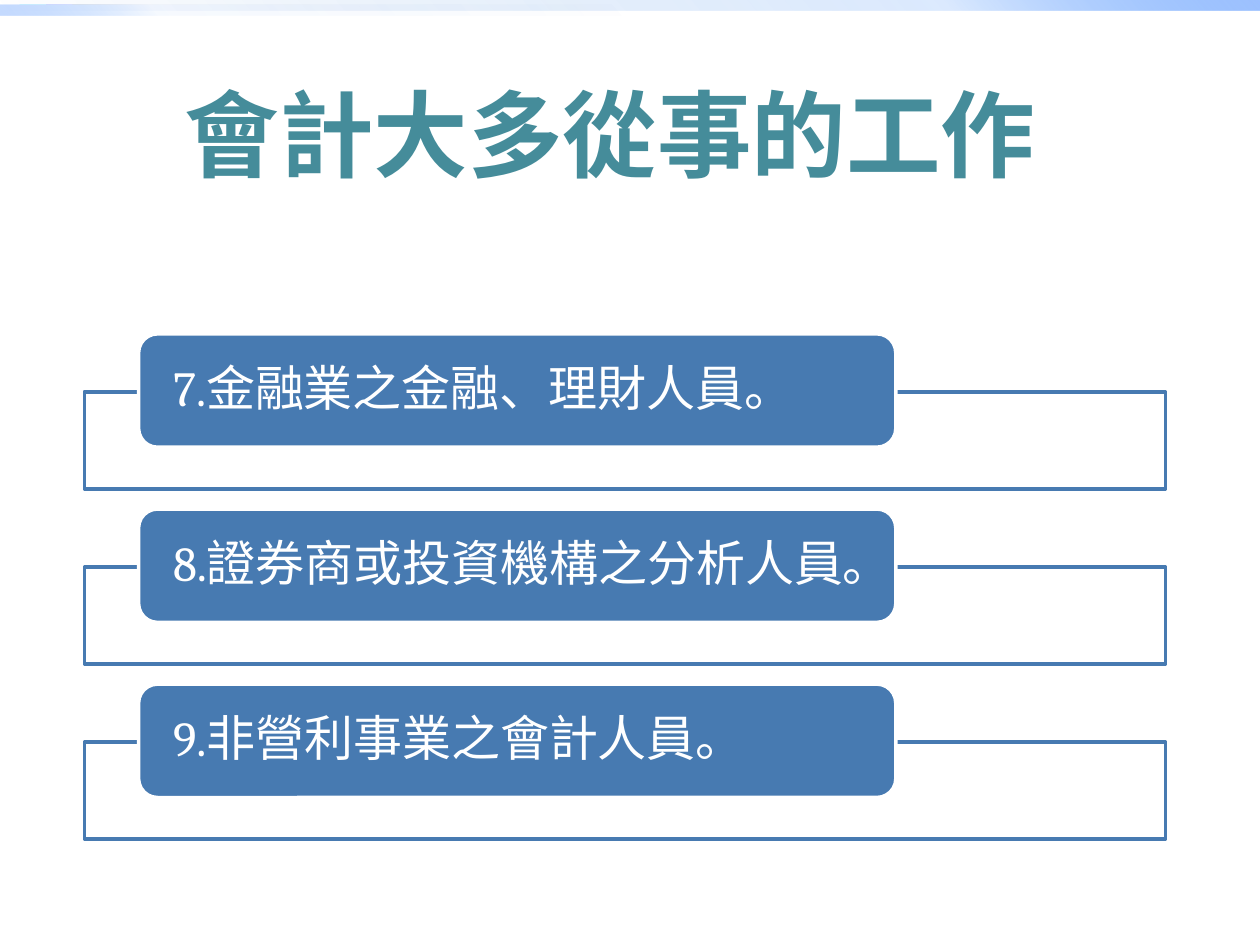
"""Build the slide on the jobs that accountants mostly do."""
import pptx
import pptx.dml.color
import pptx.enum.shapes
import pptx.enum.text
import pptx.oxml
import pptx.oxml.ns
import pptx.util

TITLE = "會計大多從事的工作"
JOBS = ["7.金融業之金融、理財人員。", "8.證券商或投資機構之分析人員。", "9.非營利事業之會計人員。"]
BARS = [
    ((0, 0, 10, 0.08), 315, [(0, "0058B7", 0), (75, "4F95FF", 20), (100, "9EC2FF", 100)]),
    ((0, 0.04, 5, 0.08), 135, [(0, "0058B7", 0), (75, "4F95FF", 5), (100, "9EC2FF", 60)]),
]
FONT, BLUE, TEAL, WHITE = "Cambria", "477AB1", "458C9A", "FFFFFF"
TOP, STEP, DROP = 2.65, 1.39, 0.46
KIND = pptx.enum.shapes.MSO_SHAPE
INCH = pptx.util.Inches


def hue(code):
    return pptx.dml.color.RGBColor.from_string(code)


def box(slide, kind, place, fill=None, line=None):
    shape = slide.shapes.add_shape(kind, *map(INCH, place))
    shape.shadow.inherit = False
    if fill:
        shape.fill.solid()
        shape.fill.fore_color.rgb = hue(fill)
    if line:
        shape.line.color.rgb = hue(line)
        shape.line.width = pptx.util.Pt(2)
    else:
        shape.line.fill.background()
    return shape


def fade(shape, angle, stops):
    marks = "".join(
        f'<a:gs pos="{spot * 1000}"><a:srgbClr val="{code}">'
        f'<a:alpha val="{alpha * 1000}"/></a:srgbClr></a:gs>'
        for spot, code, alpha in stops)
    grad = pptx.oxml.parse_xml(
        f'<a:gradFill {pptx.oxml.ns.nsdecls("a")} rotWithShape="1"><a:gsLst>{marks}</a:gsLst>'
        f'<a:lin ang="{angle * 60000}" scaled="0"/></a:gradFill>')
    shape._element.spPr.find(pptx.oxml.ns.qn("a:prstGeom")).addnext(grad)


def write(shape, text, size, code, align, bold=False):
    frame = shape.text_frame
    frame.vertical_anchor = pptx.enum.text.MSO_ANCHOR.MIDDLE
    para = frame.paragraphs[0]
    para.text = text
    para.alignment = align
    para.font.name = FONT
    para.font.size = pptx.util.Pt(size)
    para.font.bold = bold
    para.font.color.rgb = hue(code)
    return frame


def main():
    deck = pptx.Presentation()
    deck.slide_width, deck.slide_height = INCH(10), INCH(7.5)
    slide = deck.slides.add_slide(deck.slide_layouts[6])
    align = pptx.enum.text.PP_ALIGN

    for place, angle, stops in BARS:
        fade(box(slide, KIND.RECTANGLE, place), angle, stops)

    for row, job in enumerate(JOBS):
        top = TOP + row * STEP
        box(slide, KIND.RECTANGLE, (0.67, top + DROP, 8.58, 0.77), WHITE, BLUE)
        label = box(slide, KIND.ROUNDED_RECTANGLE, (1.1, top, 6.01, 0.9), BLUE, WHITE)
        frame = write(label, job, 28, WHITE, align.LEFT)
        frame.margin_left = frame.margin_right = INCH(0.23)
        frame.margin_top = frame.margin_bottom = 0
        frame.paragraphs[0].line_spacing = 0.9

    title = slide.shapes.add_textbox(*map(INCH, (1.33, 0.55, 7.02, 1.01)))
    write(title, TITLE, 54, TEAL, align.CENTER, True).word_wrap = False

    deck.save("out.pptx")


if __name__ == "__main__":
    main()
